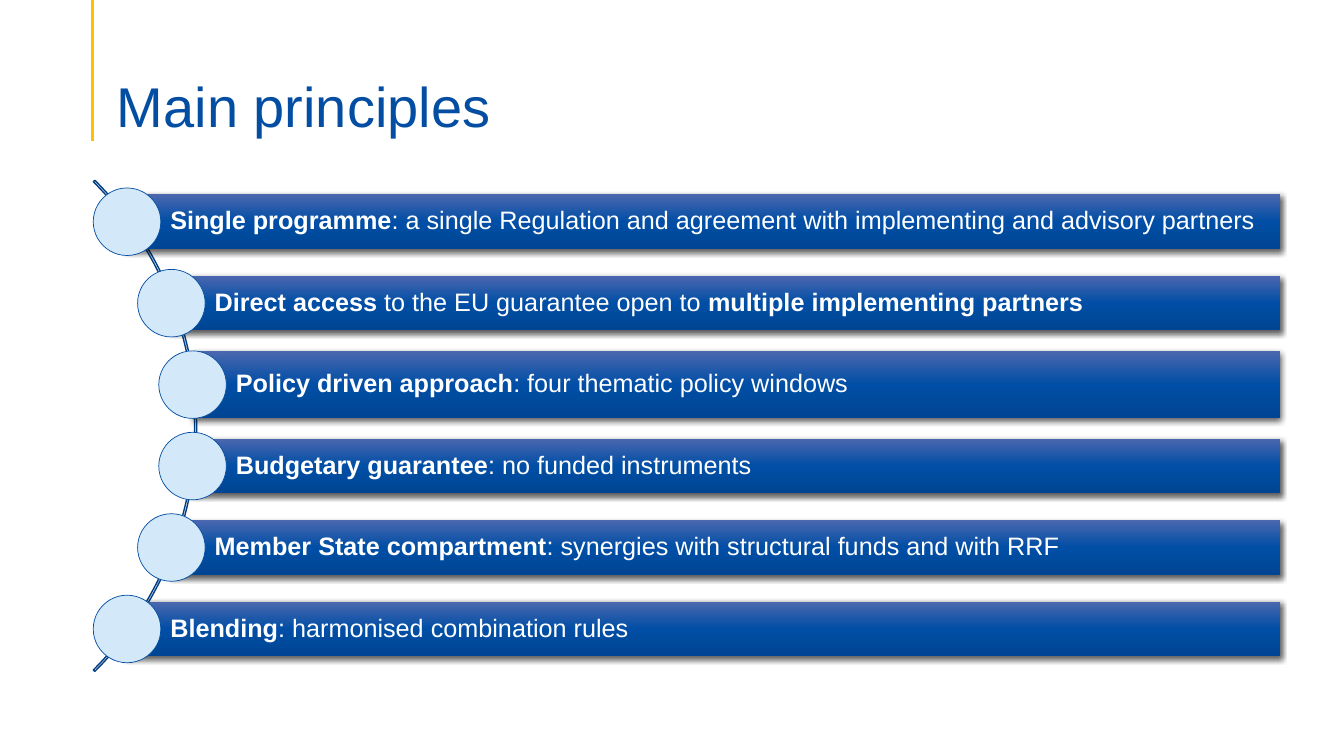
"""Build the 'Main principles' slide: six bars fanned out along an arc."""
import dataclasses

import pptx
import pptx.dml.color
import pptx.enum.shapes
import pptx.enum.text
import pptx.oxml
import pptx.oxml.ns
import pptx.shapes.autoshape
import pptx.slide
import pptx.util
from pptx.util import Inches

COLOURS = {
    "title": "034EA2",
    "accent": "FFC000",
    "arc": "023E82",
    "circle": "D3E8F9",
    "bar_top": "4B67AF",
    "bar_middle": "004EA5",
    "bar_bottom": "004593",
    "bar_text": "FFFFFF",
    "shadow": "000000",
}
FONT = "Arial"
SHAPES = pptx.enum.shapes.MSO_SHAPE
FIRST_CENTRE, LAST_CENTRE = 2.2, 6.24
BAR_RIGHT = 12.7
CIRCLE_SIZE = 0.67


@dataclasses.dataclass(frozen=True)
class Principle:
    """One bar: where it starts and its (text, bold) runs."""

    left: float
    runs: tuple[tuple[str, bool], ...]
    height: float = 0.54


PRINCIPLES = (
    Principle(1.26, (("Single programme", True), (
        ": a single Regulation and agreement with implementing and advisory partners", False))),
    Principle(1.7, (("Direct access", True), (" to the EU guarantee open to ", False),
                    ("multiple implementing partners", True))),
    Principle(1.91, (("Policy driven approach", True),
                     (": four thematic policy windows", False)), 0.66),
    Principle(1.91, (("Budgetary guarantee", True), (": no funded instruments", False))),
    Principle(1.7, (("Member State compartment", True),
                    (": synergies with structural funds and with RRF", False))),
    Principle(1.26, (("Blending", True), (": harmonised combination rules", False))),
)


def colour(name: str) -> pptx.dml.color.RGBColor:
    """Return a named colour."""
    return pptx.dml.color.RGBColor.from_string(COLOURS[name])


def drawing_element(tag: str, content: str = "", attributes: str = ""):
    """Return a parsed DrawingML element."""
    namespace = pptx.oxml.ns.nsdecls("a")
    return pptx.oxml.parse_xml(f"<a:{tag} {namespace} {attributes}>{content}</a:{tag}>")


def add_shape(slide: pptx.slide.Slide, kind: SHAPES, left: float, top: float,
              width: float, height: float) -> pptx.shapes.autoshape.Shape:
    """Add a preset shape measured in inches."""
    return slide.shapes.add_shape(
        kind, Inches(left), Inches(top), Inches(width), Inches(height))


def set_outline(shape: pptx.shapes.autoshape.Shape, name: str, points: float) -> None:
    """Give a shape a plain outline without shadow."""
    shape.shadow.inherit = False
    shape.line.color.rgb = colour(name)
    shape.line.width = pptx.util.Pt(points)


def add_accent_line(slide: pptx.slide.Slide) -> None:
    """Draw the vertical line beside the title."""
    line = slide.shapes.add_connector(
        pptx.enum.shapes.MSO_CONNECTOR.STRAIGHT,
        Inches(0.92), Inches(0), Inches(0.92), Inches(1.4))
    line.line.color.rgb = colour("accent")
    line.line.width = pptx.util.Pt(2.25)
    line._element.spPr.append(drawing_element("effectLst"))


def add_arc(slide: pptx.slide.Slide) -> None:
    """Draw the thin arc that links the circles."""
    arc = add_shape(slide, SHAPES.BLOCK_ARC, -4.94, 0.78, 6.89, 6.89)
    for index, value in enumerate((189, 27, 0.003)):
        arc.adjustments[index] = value
    arc.fill.background()
    set_outline(arc, "arc", 1)


def style_bar(bar: pptx.shapes.autoshape.Shape) -> None:
    """Apply the three-stop gradient and the soft shadow."""
    stops = "".join(
        f'<a:gs pos="{position}"><a:srgbClr val="{COLOURS[name]}"/></a:gs>'
        for position, name in ((0, "bar_top"), (50000, "bar_middle"), (100000, "bar_bottom")))
    properties = bar._element.spPr
    properties.append(drawing_element(
        "gradFill", f'<a:gsLst>{stops}</a:gsLst><a:lin ang="5400000" scaled="0"/>'))
    bar.line.fill.background()
    blur, distance = pptx.util.Pt(4.5), pptx.util.Pt(1.5)
    properties.append(drawing_element(
        "effectLst",
        f'<a:outerShdw blurRad="{blur}" dist="{distance}" dir="5400000" algn="ctr" '
        f'rotWithShape="0"><a:srgbClr val="{COLOURS["shadow"]}"><a:alpha val="63000"/>'
        '</a:srgbClr></a:outerShdw>'))


def write_bar_text(bar: pptx.shapes.autoshape.Shape, principle: Principle) -> None:
    """Write the principle into its bar."""
    frame = bar.text_frame
    frame.word_wrap = True
    frame.vertical_anchor = pptx.enum.text.MSO_ANCHOR.MIDDLE
    frame.margin_left = Inches(0.43)
    frame.margin_right = frame.margin_top = frame.margin_bottom = Inches(0.05)
    paragraph = frame.paragraphs[0]
    paragraph.alignment = pptx.enum.text.PP_ALIGN.LEFT
    paragraph.line_spacing = 0.9
    paragraph.font.name = FONT
    paragraph.font.size = pptx.util.Pt(18)
    for text, bold in principle.runs:
        run = paragraph.add_run()
        run.text = text
        run.font.bold = bold
        run.font.color.rgb = colour("bar_text")


def add_principle(slide: pptx.slide.Slide, principle: Principle, centre: float) -> None:
    """Draw a bar with the circle centred on its left edge."""
    bar = add_shape(slide, SHAPES.RECTANGLE, principle.left, centre - principle.height / 2,
                    BAR_RIGHT - principle.left, principle.height)
    style_bar(bar)
    write_bar_text(bar, principle)
    circle = add_shape(slide, SHAPES.OVAL, principle.left - CIRCLE_SIZE / 2,
                       centre - CIRCLE_SIZE / 2, CIRCLE_SIZE, CIRCLE_SIZE)
    circle.fill.solid()
    circle.fill.fore_color.rgb = colour("circle")
    set_outline(circle, "title", 0.5)


def write_title(slide: pptx.slide.Slide) -> None:
    """Place and format the title placeholder."""
    title = slide.shapes.title
    title.left, title.top = Inches(1.06), Inches(0.53)
    title.width, title.height = Inches(11.5), Inches(0.86)
    frame = title.text_frame
    frame.text = "Main principles"
    frame.auto_size = pptx.enum.text.MSO_AUTO_SIZE.NONE
    frame.vertical_anchor = pptx.enum.text.MSO_ANCHOR.BOTTOM
    frame.margin_left = frame.margin_right = Inches(0.1)
    frame.margin_top, frame.margin_bottom = Inches(0.05), Inches(0)
    paragraph = frame.paragraphs[0]
    paragraph.alignment = pptx.enum.text.PP_ALIGN.LEFT
    paragraph.line_spacing = 0.9
    paragraph.font.name = FONT
    paragraph.font.size = pptx.util.Pt(40)
    paragraph.font.color.rgb = colour("title")


def main() -> None:
    """Build and save the presentation."""
    presentation = pptx.Presentation()
    presentation.slide_width, presentation.slide_height = Inches(13.33), Inches(7.5)
    slide = presentation.slides.add_slide(presentation.slide_layouts.get_by_name("Title Only"))
    write_title(slide)
    add_accent_line(slide)
    add_arc(slide)
    pitch = (LAST_CENTRE - FIRST_CENTRE) / (len(PRINCIPLES) - 1)
    for index, principle in enumerate(PRINCIPLES):
        add_principle(slide, principle, FIRST_CENTRE + index * pitch)
    presentation.save("out.pptx")


if __name__ == "__main__":
    main()
